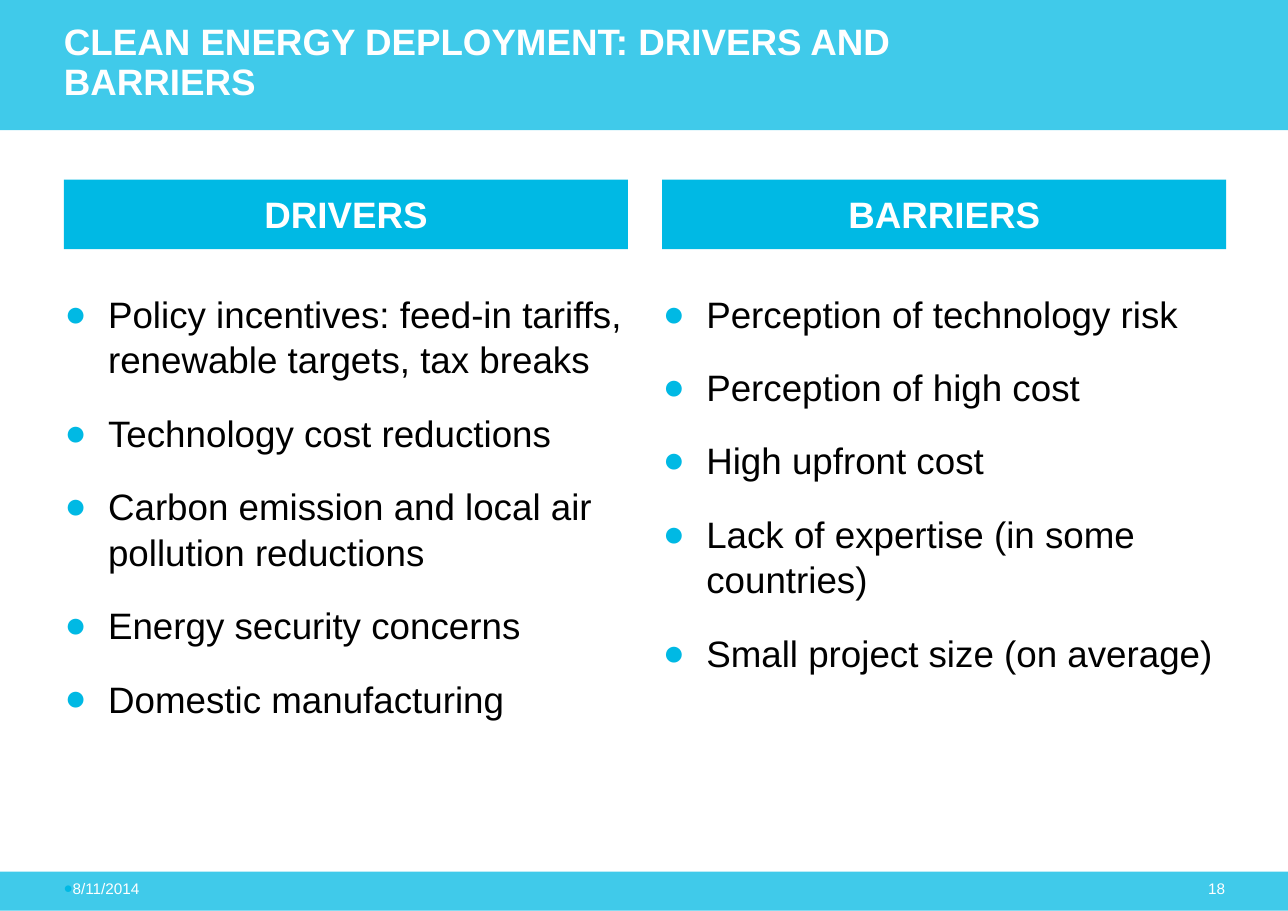
"""Build the clean energy drivers and barriers slide."""
from dataclasses import dataclass

from lxml import etree
from pptx import Presentation
from pptx.dml.color import RGBColor
from pptx.enum.shapes import MSO_SHAPE
from pptx.enum.text import MSO_ANCHOR, PP_ALIGN
from pptx.oxml.ns import qn
from pptx.util import Pt

RECT = MSO_SHAPE.RECTANGLE
TOP, MIDDLE = MSO_ANCHOR.TOP, MSO_ANCHOR.MIDDLE
LEFT, CENTER, RIGHT = PP_ALIGN.LEFT, PP_ALIGN.CENTER, PP_ALIGN.RIGHT

CYAN = RGBColor(0x00, 0xB9, 0xE4)
WHITE = RGBColor(0xFF, 0xFF, 0xFF)
BLACK = RGBColor(0x00, 0x00, 0x00)

WIDTH, HEIGHT = 841.68, 595.44
COLUMN_LEFT, COLUMN_WIDTH, COLUMN_STEP = 41.76, 368.64, 390.96
LIST_INDENT = 28.35


@dataclass
class Box:
    left: float
    top: float
    width: float
    height: float


@dataclass
class Style:
    size: float = 24
    color: RGBColor = WHITE
    bold: bool = False
    align: PP_ALIGN = LEFT
    anchor: MSO_ANCHOR = TOP
    margins: tuple[float, float, float, float] = (0, 0, 0, 0)
    line_spacing: float = 1
    before: float = 0
    after: float = 0
    bullet: bool = False
    indent: float = 0


@dataclass
class Column:
    heading: str
    items: list[str]


TITLE = Style(bold=True, anchor=MIDDLE, line_spacing=0.9)
HEADING = Style(bold=True, align=CENTER, anchor=MIDDLE, margins=(4.3, 2.9, 4.3, 4.3))
LIST = Style(color=BLACK, margins=(0, 5.7, 0, 0), line_spacing=1.04,
             before=12, after=6, bullet=True, indent=LIST_INDENT)
DATE = Style(size=10, bullet=True)
PAGE_NUMBER = Style(size=10, align=RIGHT)

COLUMNS = [
    Column("DRIVERS", [
        "Policy incentives: feed-in tariffs, renewable targets, tax breaks",
        "Technology cost reductions",
        "Carbon emission and local air pollution reductions",
        "Energy security concerns",
        "Domestic manufacturing",
    ]),
    Column("BARRIERS", [
        "Perception of technology risk",
        "Perception of high cost",
        "High upfront cost",
        "Lack of expertise (in some countries)",
        "Small project size (on average)",
    ]),
]


def add_bullet(p, indent: float) -> None:
    """Give a paragraph a cyan round bullet and a hanging indent."""
    pPr = p._p.get_or_add_pPr()
    pPr.set("marL", str(Pt(indent)))
    pPr.set("indent", str(-Pt(indent)))
    color = etree.SubElement(pPr, qn("a:buClr"))
    etree.SubElement(color, qn("a:srgbClr"), val=str(CYAN))
    etree.SubElement(pPr, qn("a:buFont"), typeface="Arial")
    etree.SubElement(pPr, qn("a:buChar"), char="●")


def write(sp, lines: list[str], style: Style) -> None:
    """Write one paragraph per line into a shape."""
    tf = sp.text_frame
    tf.word_wrap = True
    tf.vertical_anchor = style.anchor
    tf.margin_left, tf.margin_top, tf.margin_right, tf.margin_bottom = map(Pt, style.margins)
    for i, line in enumerate(lines):
        p = tf.add_paragraph() if i else tf.paragraphs[0]
        p.alignment = style.align
        p.line_spacing = style.line_spacing
        p.space_before = Pt(style.before if i else 0)
        p.space_after = Pt(style.after)
        if style.bullet:
            add_bullet(p, style.indent)
        r = p.add_run()
        r.text = line
        r.font.name = "Arial"
        r.font.size = Pt(style.size)
        r.font.bold = style.bold
        r.font.color.rgb = style.color


def add_text(s, box: Box, lines: list[str], style: Style) -> None:
    """Add a text box."""
    sp = s.shapes.add_textbox(Pt(box.left), Pt(box.top), Pt(box.width), Pt(box.height))
    write(sp, lines, style)


def add_bar(s, box: Box, opacity: int = 100):
    """Add a cyan rectangle with the given opacity in percent."""
    sp = s.shapes.add_shape(RECT, Pt(box.left), Pt(box.top), Pt(box.width), Pt(box.height))
    sp.shadow.inherit = False
    sp.line.fill.background()
    sp.fill.solid()
    sp.fill.fore_color.rgb = CYAN
    if opacity < 100:
        color = sp._element.spPr.find(qn("a:solidFill")).find(qn("a:srgbClr"))
        etree.SubElement(color, qn("a:alpha"), val=str(opacity * 1000))
    return sp


def main() -> None:
    """Build and save the slide."""
    prs = Presentation()
    prs.slide_width, prs.slide_height = Pt(WIDTH), Pt(HEIGHT)
    s = prs.slides.add_slide(prs.slide_layouts[6])

    add_bar(s, Box(0, 569.7, WIDTH, 25.5), opacity=75)
    add_bar(s, Box(0, 0, WIDTH, 85), opacity=75)
    add_text(s, Box(COLUMN_LEFT, 8.64, 622.8, 65.52),
             ["CLEAN ENERGY DEPLOYMENT: DRIVERS AND BARRIERS"], TITLE)

    for i, column in enumerate(COLUMNS):
        left = COLUMN_LEFT + i * COLUMN_STEP
        bar = add_bar(s, Box(left, 117.5, COLUMN_WIDTH, 45.36))
        write(bar, [column.heading], HEADING)
        add_text(s, Box(left + 0.5, 183.6, COLUMN_WIDTH, 387.36), column.items, LIST)

    add_text(s, Box(41.5, 574.56, COLUMN_WIDTH, 12.24), ["8/11/2014"], DATE)
    add_text(s, Box(755.28, 574.56, 45.36, 12.24), ["18"], PAGE_NUMBER)
    prs.save("out.pptx")


if __name__ == "__main__":
    main()
